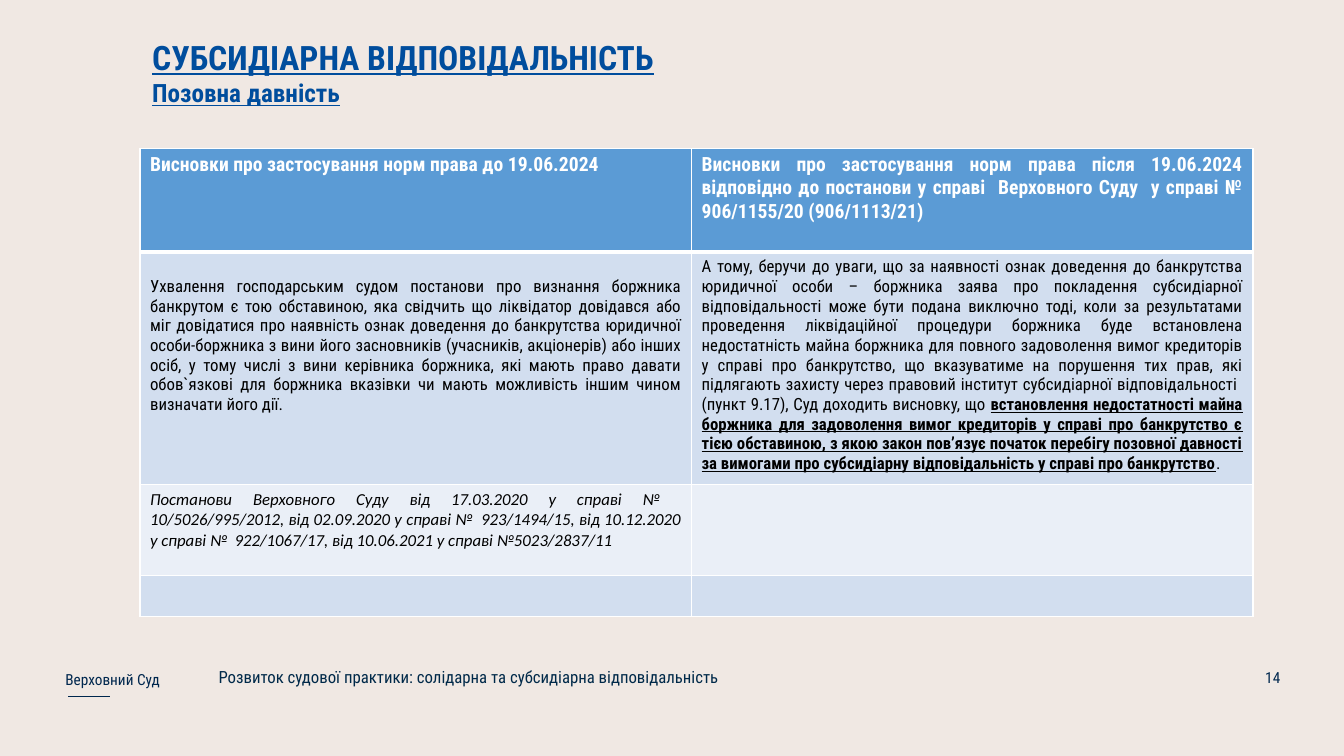
from lxml.etree import SubElement
from pptx import Presentation
from pptx.dml.color import RGBColor
from pptx.enum.shapes import MSO_CONNECTOR
from pptx.enum.text import MSO_ANCHOR, MSO_AUTO_SIZE, PP_ALIGN
from pptx.oxml.ns import qn
from pptx.util import Pt

BACKGROUND = RGBColor(0xF0, 0xE8, 0xE3)
TITLE_BLUE = RGBColor(0x00, 0x4D, 0x9D)
NAVY = RGBColor(0x00, 0x27, 0x4E)
FOOTER_NAVY = RGBColor(0x00, 0x29, 0x49)
HEADER_BLUE = RGBColor(0x5B, 0x9B, 0xD5)
BAND_DARK = RGBColor(0xD2, 0xDE, 0xEF)
BAND_LIGHT = RGBColor(0xEA, 0xEF, 0xF7)
WHITE = RGBColor(0xFF, 0xFF, 0xFF)
BLACK = RGBColor(0x00, 0x00, 0x00)

FONT = "Roboto Condensed"
CITATION_FONT = "Calibri"

COLUMN_WIDTHS = (394, 401)
ROW_HEIGHTS = (74, 166, 65, 28.4)
ROW_FILLS = (HEADER_BLUE, BAND_DARK, BAND_LIGHT, BAND_DARK)

HEADER_BEFORE = "Висновки про застосування норм права до 19.06.2024"
HEADER_AFTER = (
    "Висновки про застосування норм права після 19.06.2024 відповідно до "
    "постанови у справі  Верховного Суду  у справі № 906/1155/20 (906/1113/21)")
POSITION_BEFORE = (
    "Ухвалення господарським судом постанови про визнання боржника банкрутом є "
    "тою обставиною, яка свідчить що ліквідатор довідався або міг довідатися про "
    "наявність ознак доведення до банкрутства юридичної особи-боржника з вини "
    "його засновників (учасників, акціонерів) або інших осіб, у тому числі з вини "
    "керівника боржника, які мають право давати обов`язкові для боржника вказівки "
    "чи мають можливість іншим чином визначати його дії.")
POSITION_AFTER = (
    "А тому, беручи до уваги, що за наявності ознак доведення до банкрутства "
    "юридичної особи – боржника заява про покладення субсидіарної "
    "відповідальності може бути подана виключно тоді, коли за результатами "
    "проведення ліквідаційної процедури боржника буде встановлена недостатність "
    "майна боржника для повного задоволення вимог кредиторів у справі про "
    "банкрутство, що вказуватиме на порушення тих прав, які підлягають захисту "
    "через правовий інститут субсидіарної відповідальності  (пункт 9.17), Суд "
    "доходить висновку, що ")
KEY_FINDING = (
    "встановлення недостатності майна боржника для задоволення вимог кредиторів "
    "у справі про банкрутство є тією обставиною, з якою закон пов’язує початок "
    "перебігу позовної давності за вимогами про субсидіарну відповідальність у "
    "справі про банкрутство")
CITATIONS = (
    "Постанови Верховного Суду від 17.03.2020 у справі №  10/5026/995/2012, від "
    "02.09.2020 у справі №  923/1494/15, від 10.12.2020 у справі №  922/1067/17, "
    "від 10.06.2021 у справі №5023/2837/11")


def add_run(p, text, size, color, bold=False, italic=False, underline=False,
            font=FONT):
    r = p.add_run()
    r.text = text
    r.font.name = font
    r.font.size = Pt(size)
    r.font.color.rgb = color
    r.font.bold = bold
    r.font.italic = italic
    r.font.underline = underline


def add_title(slide, left, top, width, height):
    sp = slide.shapes.title
    sp.left, sp.top, sp.width, sp.height = Pt(left), Pt(top), Pt(width), Pt(height)
    tf = sp.text_frame
    tf.word_wrap = True
    tf.auto_size = MSO_AUTO_SIZE.NONE
    tf.vertical_anchor = MSO_ANCHOR.TOP
    lines = (("СУБСИДІАРНА ВІДПОВІДАЛЬНІСТЬ", 24), ("Позовна давність", 18))
    for i, (text, size) in enumerate(lines):
        p = tf.add_paragraph() if i else tf.paragraphs[0]
        p.alignment = PP_ALIGN.LEFT
        add_run(p, text, size, TITLE_BLUE, bold=True, underline=True)


def add_label(slide, left, top, width, height, text, size, color,
              align=PP_ALIGN.LEFT, anchor=MSO_ANCHOR.MIDDLE, spacing=1.0):
    sp = slide.shapes.add_textbox(Pt(left), Pt(top), Pt(width), Pt(height))
    tf = sp.text_frame
    tf.word_wrap = True
    tf.vertical_anchor = anchor
    p = tf.paragraphs[0]
    p.alignment = align
    p.line_spacing = spacing
    add_run(p, text, size, color)


def set_borders(cell, bottom_width, top_width):
    tc_pr = cell._tc.get_or_add_tcPr()
    widths = {"a:lnL": 1, "a:lnR": 1, "a:lnT": top_width, "a:lnB": bottom_width}
    for tag, width in widths.items():
        ln = SubElement(tc_pr, qn(tag), w=str(Pt(width)))
        fill = SubElement(ln, qn("a:solidFill"))
        SubElement(fill, qn("a:srgbClr"), val=str(WHITE))


def fill_cell(cell, runs, align=PP_ALIGN.JUSTIFY):
    """Write runs given as (text, formatting) pairs into one paragraph."""
    p = cell.text_frame.paragraphs[0]
    p.alignment = align
    for text, style in runs:
        add_run(p, text, **style)


def add_comparison_table(slide, left, top):
    table = slide.shapes.add_table(
        len(ROW_HEIGHTS), len(COLUMN_WIDTHS), Pt(left), Pt(top),
        Pt(sum(COLUMN_WIDTHS)), Pt(sum(ROW_HEIGHTS))).table
    for column, width in zip(table.columns, COLUMN_WIDTHS):
        column.width = Pt(width)
    for i, (row, height) in enumerate(zip(table.rows, ROW_HEIGHTS)):
        row.height = Pt(height)
        for cell in row.cells:
            set_borders(cell, 3 if i == 0 else 1, 3 if i == 1 else 1)
            cell.fill.solid()
            cell.fill.fore_color.rgb = ROW_FILLS[i]

    header = dict(size=14, color=WHITE, bold=True)
    body = dict(size=12, color=BLACK)
    fill_cell(table.cell(0, 0), [(HEADER_BEFORE, header)], PP_ALIGN.LEFT)
    fill_cell(table.cell(0, 1), [(HEADER_AFTER, header)])
    table.cell(1, 0).margin_top = Pt(17.7)
    fill_cell(table.cell(1, 0), [(POSITION_BEFORE, body)])
    fill_cell(table.cell(1, 1), [
        (POSITION_AFTER, body),
        (KEY_FINDING, dict(body, bold=True, underline=True)),
        (".", body)])
    fill_cell(table.cell(2, 0),
              [(CITATIONS, dict(body, italic=True, font=CITATION_FONT))])


def add_footer(slide, left, top, width):
    add_label(slide, left, top, 104, 29, "Верховний Суд", 10.9, NAVY, spacing=1.14)
    line_y = Pt(top + 27.3)
    line = slide.shapes.add_connector(
        MSO_CONNECTOR.STRAIGHT, Pt(left + 9), line_y, Pt(left + 39), line_y)
    line.line.color.rgb = NAVY
    line.line.width = Pt(1.12)
    SubElement(line._element.spPr, qn("a:effectLst"))
    add_label(slide, left + 109.4, top + 4.3, 608, 26,
              "Розвиток судової практики: солідарна та субсидіарна відповідальність",
              12, FOOTER_NAVY, PP_ALIGN.JUSTIFY, MSO_ANCHOR.TOP, 0.9)
    add_label(slide, left + width - 216, top - 0.8, 216, 29, "14", 10.9, NAVY,
              PP_ALIGN.RIGHT)


def main():
    prs = Presentation()
    prs.slide_width, prs.slide_height = Pt(960), Pt(540)
    slide = prs.slides.add_slide(prs.slide_layouts[5])
    slide.background.fill.solid()
    slide.background.fill.fore_color.rgb = BACKGROUND
    add_title(slide, 101.5, 23, 839, 58)
    add_comparison_table(slide, 100, 106)
    add_footer(slide, 39.6, 470.2, 882)
    prs.save("out.pptx")


if __name__ == "__main__":
    main()
